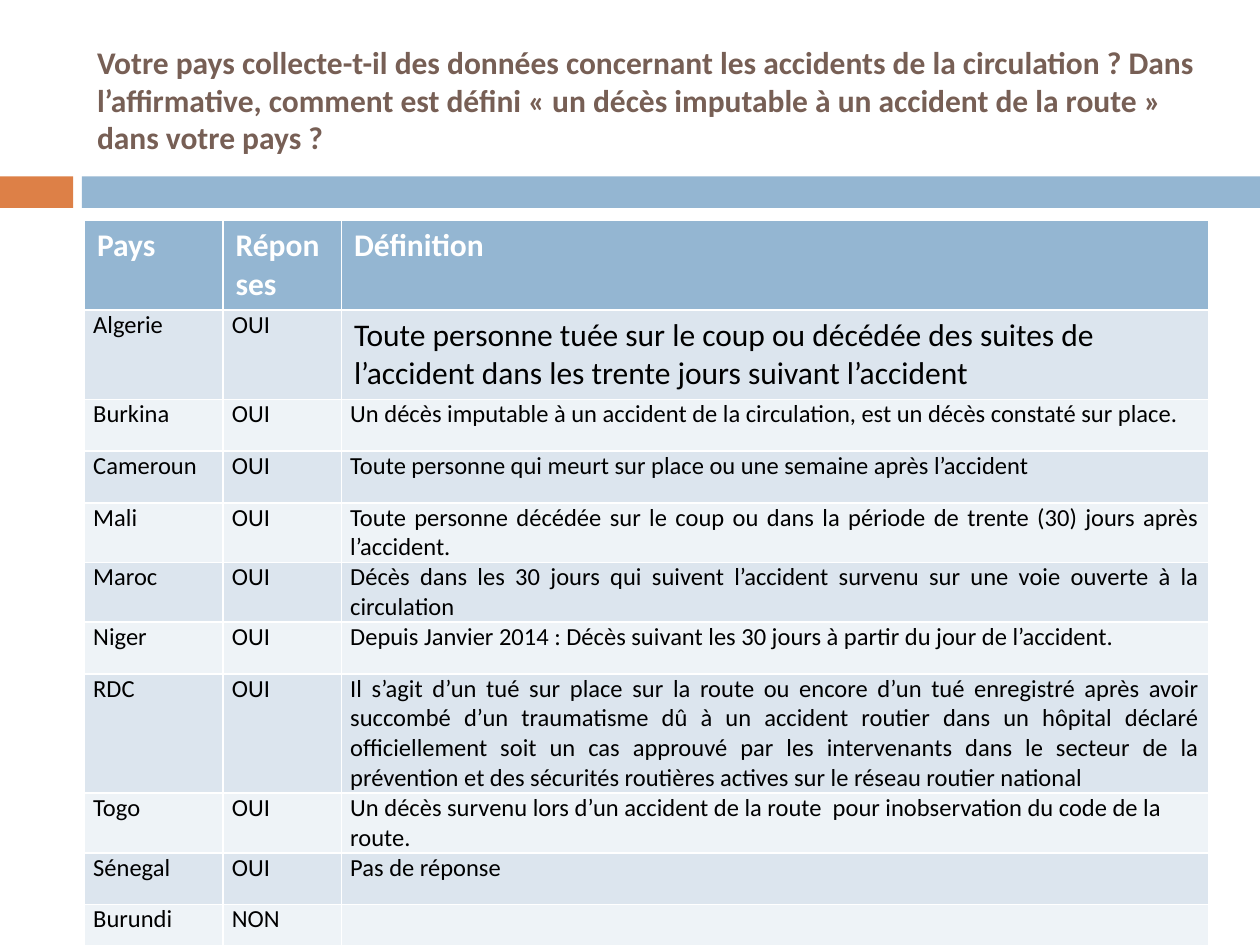
from pptx import Presentation
from pptx.dml.color import RGBColor as Rgb
from pptx.enum.shapes import MSO_SHAPE as Shape
from pptx.enum.text import MSO_ANCHOR as Anchor, PP_ALIGN as Align
from pptx.util import Inches, Pt

WHITE = Rgb(0xFF, 0xFF, 0xFF)
BLACK = Rgb(0x00, 0x00, 0x00)
BROWN = Rgb(0x77, 0x5F, 0x55)
ORANGE = Rgb(0xDD, 0x80, 0x47)
BLUE = Rgb(0x94, 0xB6, 0xD2)
BANDS = Rgb(0xEE, 0xF3, 0xF7), Rgb(0xDC, 0xE5, 0xEE)

TITLE = (
    "Votre pays collecte-t-il des données concernant les accidents de la circulation ? "
    "Dans l’affirmative, comment est défini « un décès imputable à un accident de la "
    "route » dans votre pays ?"
)
HEADS = "Pays", "Réponses", "Définition"
ROWS = [
    ("Algerie", "OUI", "Toute personne tuée sur le coup ou décédée des suites de "
     "l’accident dans les trente jours suivant l’accident"),
    ("Burkina", "OUI", "Un décès imputable à un accident de la circulation, est un "
     "décès constaté sur place."),
    ("Cameroun", "OUI", "Toute personne qui meurt sur place ou une semaine après l’accident"),
    ("Mali", "OUI", "Toute personne décédée sur le coup ou dans la période de trente "
     "(30) jours après l’accident."),
    ("Maroc", "OUI", "Décès dans les 30 jours qui suivent l’accident survenu sur une "
     "voie ouverte à la circulation"),
    ("Niger", "OUI", "Depuis Janvier 2014 : Décès suivant les 30 jours à partir du "
     "jour de l’accident."),
    ("RDC", "OUI", "Il s’agit d’un tué sur place sur la route ou encore d’un tué "
     "enregistré après avoir succombé d’un traumatisme dû à un accident routier dans un "
     "hôpital déclaré officiellement soit un cas approuvé par les intervenants dans le "
     "secteur de la prévention et des sécurités routières actives sur le réseau routier "
     "national"),
    ("Togo", "OUI", "Un décès survenu lors d’un accident de la route  pour "
     "inobservation du code de la route."),
    ("Sénegal", "OUI", "Pas de réponse"),
    ("Burundi", "NON", ""),
]
LARGE = {"Algerie"}
JUSTIFY = {"Mali", "Maroc", "RDC"}
WIDTHS = 1.1, 0.94, 6.88


class Page:
    """Draws styled elements on the current slide."""

    face = "Calibri"

    def __init__(self, slide):
        self.slide = slide

    def style(self, para, size, color, bold=False, align=Align.LEFT):
        font = para.font
        font.name, font.size, font.bold = self.face, Pt(size), bold
        font.color.rgb = color
        para.alignment = align

    def title(self, text, left, top, width, height):
        box = self.slide.shapes.title
        box.left, box.top = Inches(left), Inches(top)
        box.width, box.height = Inches(width), Inches(height)
        frame = box.text_frame
        frame.text = text
        frame.word_wrap = True
        frame.vertical_anchor = Anchor.MIDDLE
        self.style(frame.paragraphs[0], 18, BROWN, bold=True)

    def bar(self, left, width, color):
        bar = self.slide.shapes.add_shape(
            Shape.RECTANGLE, Inches(left), Inches(1.4), Inches(width), Inches(0.25))
        bar.shadow.inherit = False
        bar.fill.solid()
        bar.fill.fore_color.rgb = color
        bar.line.fill.background()

    def cell(self, cell, text, fill, size=14, color=BLACK, bold=False, align=Align.LEFT):
        cell.fill.solid()
        cell.fill.fore_color.rgb = fill
        if text and size == 14:
            cell.margin_left = cell.margin_right = Inches(0.07)
            cell.margin_top = cell.margin_bottom = 0
        cell.text = text
        self.style(cell.text_frame.paragraphs[0], size, color, bold, align)

    def table(self, left, top, high):
        count = len(ROWS) + 1
        grid = self.slide.shapes.add_table(
            count, len(HEADS), Inches(left), Inches(top),
            Inches(sum(WIDTHS)), Inches(high * count)).table
        for col, width in zip(grid.columns, WIDTHS):
            col.width = Inches(width)
        for c, head in enumerate(HEADS):
            self.cell(grid.cell(0, c), head, BLUE, 18, WHITE, True)
        for r, row in enumerate(ROWS, 1):
            for c, text in enumerate(row):
                last = c == len(HEADS) - 1
                size = 18 if last and row[0] in LARGE else 14
                align = Align.JUSTIFY if last and row[0] in JUSTIFY else Align.LEFT
                self.cell(grid.cell(r, c), text, BANDS[r % 2], size, align=align)


def main():
    deck = Presentation()
    deck.slide_width, deck.slide_height = Inches(10), Inches(7.5)
    page = Page(deck.slides.add_slide(deck.slide_layouts[5]))
    page.bar(0, 0.58, ORANGE)
    page.bar(0.65, 9.35, BLUE)
    page.title(TITLE, 0.67, 0.25, 8.92, 1.08)
    page.table(0.67, 1.75, 0.41)
    deck.save("out.pptx")


if __name__ == "__main__":
    main()
